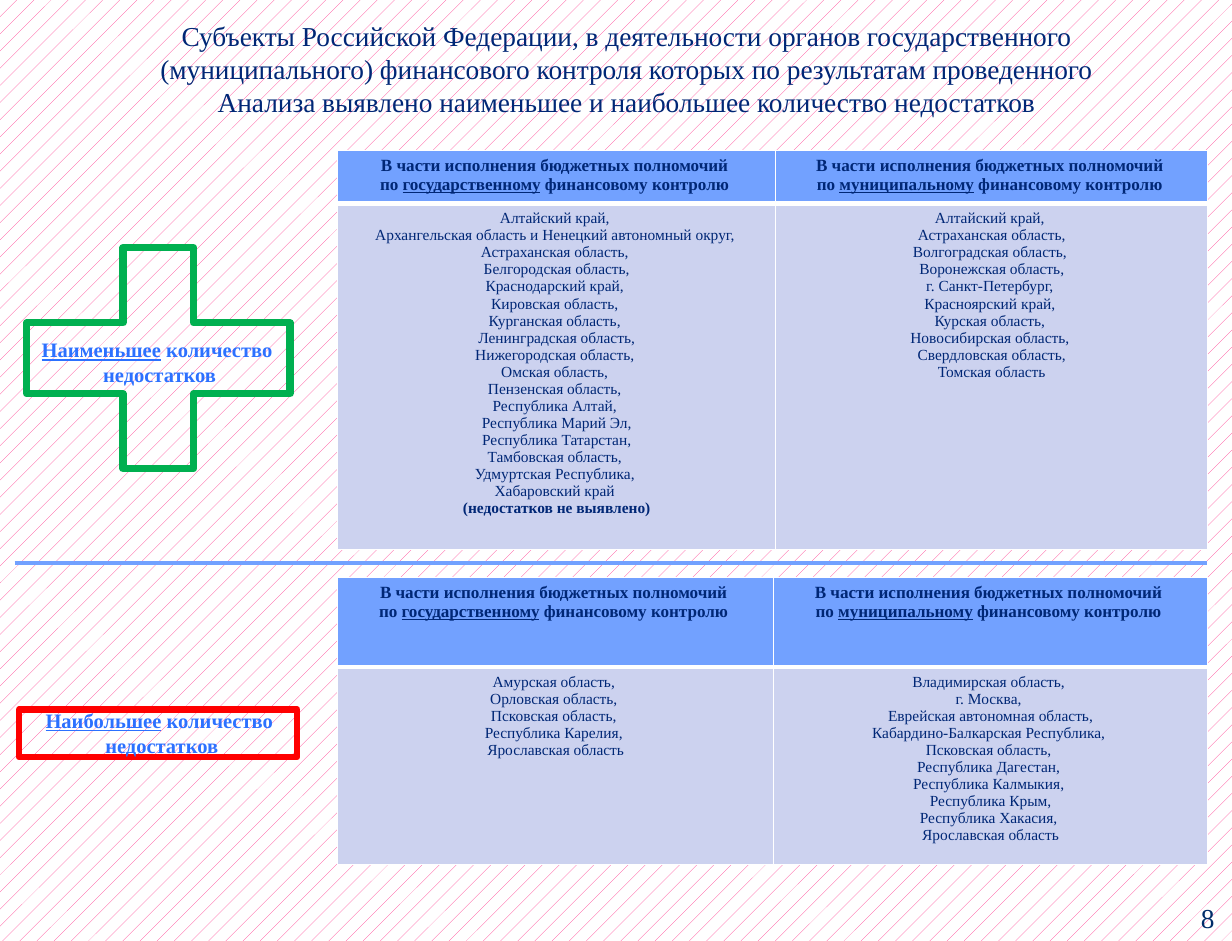
from copy import deepcopy
from dataclasses import dataclass

from lxml.etree import SubElement
from pptx import Presentation
from pptx.dml.color import RGBColor
from pptx.enum.dml import MSO_PATTERN
from pptx.enum.shapes import MSO_CONNECTOR, MSO_SHAPE
from pptx.enum.text import MSO_AUTO_SIZE, PP_ALIGN
from pptx.oxml import parse_xml
from pptx.oxml.ns import nsdecls, qn
from pptx.util import Cm, Pt

NAVY = RGBColor(0x00, 0x27, 0x76)
PAGE_NAVY = RGBColor(0x00, 0x2D, 0x6A)
LABEL_BLUE = RGBColor(0x2C, 0x71, 0xFF)
HEADER_BLUE = RGBColor(0x72, 0xA1, 0xFF)
BODY_BLUE = RGBColor(0xCC, 0xD2, 0xEF)
GREEN = RGBColor(0x00, 0xB0, 0x50)
RED = RGBColor(0xFF, 0x00, 0x00)
PINK = RGBColor(0xFF, 0x38, 0x8C)
WHITE = RGBColor(0xFF, 0xFF, 0xFF)

FONT = "Times New Roman"
TITLE_FORMAT = {"name": FONT, "size": Pt(16)}
LABEL_FORMAT = {"name": FONT, "size": Pt(12), "bold": True}
HEADER_FORMAT = {"name": FONT, "size": Pt(10), "bold": True}
BODY_FORMAT = {"name": FONT, "size": Pt(9), "bold": False}

TABLE_LEFT = 6.96
CONTROL_KINDS = ("государственному", "муниципальному")
NO_FAULTS = "(недостатков не выявлено)"


@dataclass
class Sign:
    shape: MSO_SHAPE
    place: tuple[float, float, float, float]
    color: RGBColor
    weight: float
    label_place: tuple[float, float, float, float]
    word: str


@dataclass
class RegionTable:
    top: float
    columns: tuple[float, float]
    rows: tuple[float, float]
    regions: tuple[tuple[str, ...], tuple[str, ...]]


SIGNS = (
    Sign(MSO_SHAPE.MATH_PLUS, (-0.43, 4.29, 7.39, 6.2), GREEN, 4.25,
         (0.61, 6.83, 5.33, 1.27), "Наименьшее"),
    Sign(MSO_SHAPE.MATH_MINUS, (-0.64, 13.03, 7.8, 4.19), RED, 3.75,
         (0.69, 14.48, 5.26, 1.27), "Наибольшее"),
)

TABLES = (
    RegionTable(3.1, (9.03, 8.91), (1.09, 7.11), (
        ("Алтайский край, ", "Архангельская область и Ненецкий автономный округ, ",
         "Астраханская область, ", "Белгородская область,", "Краснодарский край, ",
         "Кировская область, ", "Курганская область, ", "Ленинградская область,",
         "Нижегородская область, ", "Омская область, ", "Пензенская область, ",
         "Республика Алтай, ", "Республика Марий Эл,", " Республика Татарстан, ",
         "Тамбовская область, ", "Удмуртская Республика, ", "Хабаровский край ",
         NO_FAULTS),
        ("Алтайский край, ", "Астраханская область,", "Волгоградская область, ",
         "Воронежская область,", "г. Санкт-Петербург, ", "Красноярский край, ",
         "Курская область, ", "Новосибирская область, ", "Свердловская область,",
         "Томская область"),
    )),
    RegionTable(11.91, (8.99, 8.94), (1.85, 4.07), (
        ("Амурская область, ", "Орловская область, ", "Псковская область, ",
         "Республика Карелия, ", "Ярославская область"),
        ("Владимирская область, ", "г. Москва, ", "Еврейская автономная область,",
         "Кабардино-Балкарская Республика, ", "Псковская область, ",
         "Республика Дагестан, ", "Республика Калмыкия, ", "Республика Крым,",
         "Республика Хакасия, ", "Ярославская область"),
    )),
)


def add_span(para, text: str, color: RGBColor, formats: dict, **extra):
    span = para.add_run()
    span.text = text
    for name, value in {**formats, **extra}.items():
        setattr(span.font, name, value)
    span.font.color.rgb = color
    return span


def add_box(page, place: tuple, wrap: bool):
    frame = page.shapes.add_textbox(*map(Cm, place)).text_frame
    frame.word_wrap = wrap
    frame.auto_size = MSO_AUTO_SIZE.SHAPE_TO_FIT_TEXT
    return frame


def draw_sign(page, sign: Sign) -> None:
    shape = page.shapes.add_shape(sign.shape, *map(Cm, sign.place))
    shape.shadow.inherit = False
    shape.fill.background()
    shape.line.color.rgb = sign.color
    shape.line.width = Pt(sign.weight)
    SubElement(shape.line._get_or_add_ln(), qn("a:round"))

    frame = add_box(page, sign.label_place, wrap=False)
    para = frame.paragraphs[0]
    add_span(para, sign.word, LABEL_BLUE, LABEL_FORMAT, underline=True)
    add_span(para, " количество", LABEL_BLUE, LABEL_FORMAT)
    para = frame.add_paragraph()
    para.alignment = PP_ALIGN.CENTER
    add_span(para, " недостатков", LABEL_BLUE, LABEL_FORMAT)


def style_cell(cell, fill: RGBColor, top: float, bottom: float) -> None:
    cell.fill.solid()
    cell.fill.fore_color.rgb = fill
    properties = cell._tc.get_or_add_tcPr()
    edges = {"lnL": 1, "lnR": 1, "lnT": top, "lnB": bottom}
    for index, (edge, weight) in enumerate(edges.items()):
        properties.insert(index, parse_xml(
            f'<a:{edge} {nsdecls("a")} w="{Pt(weight)}"><a:solidFill>'
            f'<a:srgbClr val="{WHITE}"/></a:solidFill></a:{edge}>'))


def fill_header(cell, kind: str) -> None:
    para = cell.text_frame.paragraphs[0]
    para.alignment = PP_ALIGN.CENTER
    first = add_span(para, "В части исполнения бюджетных полномочий ", NAVY, HEADER_FORMAT)
    para.add_line_break()
    # The break needs the size of the text around it
    para._p.find(qn("a:br")).append(deepcopy(first._r.get_or_add_rPr()))
    add_span(para, "по ", NAVY, HEADER_FORMAT)
    add_span(para, kind, NAVY, HEADER_FORMAT, underline=True)
    add_span(para, " финансовому контролю ", NAVY, HEADER_FORMAT)


def fill_regions(cell, regions: tuple[str, ...]) -> None:
    frame = cell.text_frame
    for index, region in enumerate(regions):
        para = frame.add_paragraph() if index else frame.paragraphs[0]
        para.alignment = PP_ALIGN.CENTER
        add_span(para, region, NAVY, BODY_FORMAT, bold=region == NO_FAULTS)


def draw_table(page, spec_table: RegionTable) -> None:
    table = page.shapes.add_table(
        2, 2, Cm(TABLE_LEFT), Cm(spec_table.top),
        Cm(sum(spec_table.columns)), Cm(sum(spec_table.rows))).table
    for row, height in zip(table.rows, spec_table.rows):
        row.height = Cm(height)
    for index, width in enumerate(spec_table.columns):
        table.columns[index].width = Cm(width)
        header, body = table.cell(0, index), table.cell(1, index)
        style_cell(header, HEADER_BLUE, top=1, bottom=3)
        style_cell(body, BODY_BLUE, top=3, bottom=1)
        fill_header(header, CONTROL_KINDS[index])
        fill_regions(body, spec_table.regions[index])


def main() -> None:
    deck = Presentation()
    deck.slide_width, deck.slide_height = Cm(25.4), Cm(19.41)
    page = deck.slides.add_slide(deck.slide_layouts[6])

    # Background
    background = page.background.fill
    background.patterned()
    background.pattern = MSO_PATTERN.PERCENT_5
    background.fore_color.rgb = PINK
    background.back_color.rgb = WHITE

    # Signs and region tables
    for sign in SIGNS:
        draw_sign(page, sign)
    for region_table in TABLES:
        draw_table(page, region_table)

    # Title
    frame = add_box(page, (3.05, 0.3, 19.74, 2.24), wrap=True)
    frame.margin_left = frame.margin_right = Cm(0.18)
    frame.margin_top = frame.margin_bottom = Cm(0.1)
    para = frame.paragraphs[0]
    para.alignment = PP_ALIGN.CENTER
    add_span(para, "Субъекты Российской Федерации, в деятельности органов "
             "государственного (муниципального) финансового контроля которых "
             "по результатам проведенного Анализа выявлено наименьшее и "
             "наибольшее количество недостатков", NAVY, TITLE_FORMAT)

    # Divider
    divider = page.shapes.add_connector(
        MSO_CONNECTOR.STRAIGHT, Cm(0.3), Cm(11.61), Cm(24.89), Cm(11.61))
    divider.line.color.rgb = HEADER_BLUE
    divider.line.width = Pt(2.5)
    SubElement(divider._element.spPr, qn("a:effectLst"))

    # Page number
    frame = add_box(page, (24.51, 18.47, 0.79, 0.94), wrap=True)
    add_span(frame.paragraphs[0], "8", PAGE_NAVY, TITLE_FORMAT)

    deck.save("out.pptx")


if __name__ == "__main__":
    main()
